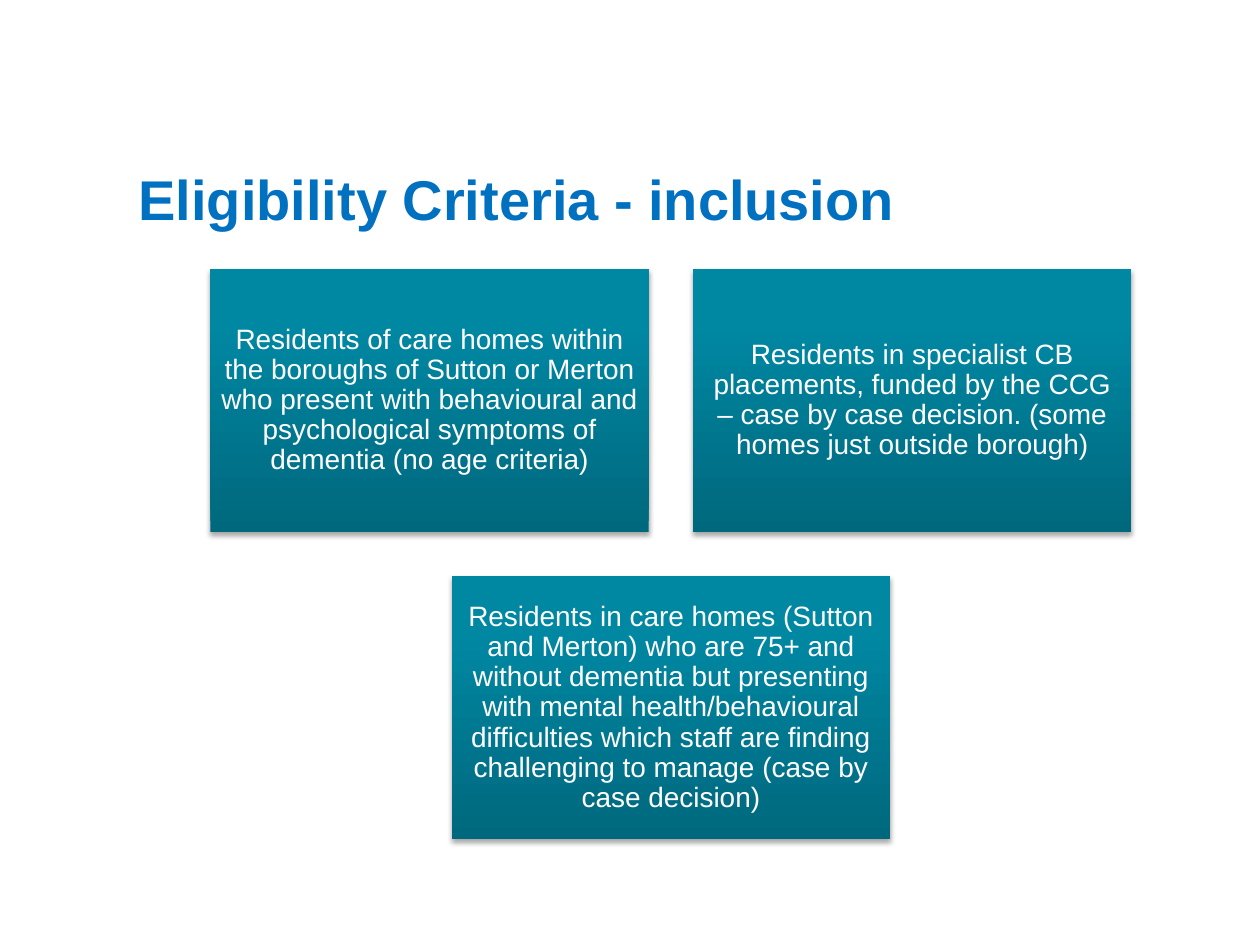
from copy import deepcopy

from lxml import etree
from pptx import Presentation
from pptx.dml.color import RGBColor
from pptx.enum.shapes import MSO_SHAPE as Preset
from pptx.enum.text import MSO_ANCHOR as Anchor, MSO_AUTO_SIZE as AutoSize, PP_ALIGN as Align
from pptx.oxml.ns import qn
from pptx.util import Cm, Pt

TITLE_BLUE = RGBColor(0x00, 0x70, 0xC0)
WHITE = RGBColor(0xFF, 0xFF, 0xFF)
TEAL_STOPS = [
    (0, RGBColor(0x00, 0x68, 0x7D)),
    (0.8, RGBColor(0x00, 0x88, 0xA3)),
    (1, RGBColor(0x00, 0x88, 0xA4)),
]
FONT = "Arial"
COLUMNS = 2
GAP = Cm(0.89)
INSET = Cm(0.18)
CRITERIA = [
    "Residents of care homes within the boroughs of Sutton or Merton who present "
    "with behavioural and psychological symptoms of dementia (no age criteria)",
    "Residents in specialist CB placements, funded by the CCG – case by case "
    "decision. (some homes just outside borough)",
    "Residents in care homes (Sutton and Merton) who are 75+ and without dementia "
    "but presenting with mental health/behavioural difficulties which staff are "
    "finding challenging to manage (case by case decision)",
]


def format_text(frame, align, size, color, bold=False):
    frame.word_wrap = True
    frame.auto_size = AutoSize.NONE
    frame.vertical_anchor = Anchor.MIDDLE
    para = frame.paragraphs[0]
    para.alignment = align
    font = para.runs[0].font
    font.name, font.size, font.bold = FONT, Pt(size), bold
    font.color.rgb = color
    return para


def place_title(page, text, left, top, width, height):
    title = page.shapes.title
    title.left, title.top, title.width, title.height = left, top, width, height
    title.text_frame.text = text
    format_text(title.text_frame, Align.LEFT, 32, TITLE_BLUE, bold=True)


def fill_teal(box):
    box.fill.gradient()
    box.fill.gradient_angle = 90
    # A new gradient has two stops; the third is a copy of the first
    stop_list = box.fill.gradient_stops[0]._gs.getparent()
    stop_list.append(deepcopy(stop_list[0]))
    for stop, (position, color) in zip(box.fill.gradient_stops, TEAL_STOPS):
        stop.position = position
        stop.color.rgb = color


def add_soft_shadow(box):
    box.shadow.inherit = False
    effects = box._element.spPr.find(qn("a:effectLst"))
    shadow = etree.SubElement(effects, qn("a:outerShdw"), blurRad=str(Pt(3.1)),
                              dist=str(Pt(1.8)), dir="5400000", rotWithShape="0")
    color = etree.SubElement(shadow, qn("a:srgbClr"), val="000000")
    etree.SubElement(color, qn("a:alpha"), val="35000")


def add_criterion(page, text, left, top, width, height):
    box = page.shapes.add_shape(Preset.RECTANGLE, left, top, width, height)
    fill_teal(box)
    box.line.fill.background()
    add_soft_shadow(box)
    frame = box.text_frame
    frame.margin_left = frame.margin_right = INSET
    frame.margin_top = frame.margin_bottom = INSET
    frame.text = text
    para = format_text(frame, Align.CENTER, 16, WHITE)
    para.line_spacing = 0.9
    para.space_after = Pt(5.6)


def add_criteria_grid(page, criteria, left, top, width, height):
    rows = [criteria[i:i + COLUMNS] for i in range(0, len(criteria), COLUMNS)]
    box_width = (width - GAP * (COLUMNS - 1)) // COLUMNS
    box_height = (height - GAP * (len(rows) - 1)) // len(rows)
    for row_number, row in enumerate(rows):
        # Each row is centred in the grid
        row_width = len(row) * (box_width + GAP) - GAP
        row_left = left + (width - row_width) // 2
        for column, text in enumerate(row):
            add_criterion(page, text, row_left + column * (box_width + GAP),
                          top + row_number * (box_height + GAP), box_width, box_height)


def main():
    deck = Presentation()
    deck.slide_width, deck.slide_height = Cm(25.4), Cm(19.05)
    page = deck.slides.add_slide(deck.slide_layouts[5])
    place_title(page, "Eligibility Criteria - inclusion",
                Cm(2.54), Cm(2.92), Cm(21.97), Cm(2.13))
    add_criteria_grid(page, CRITERIA, Cm(4.24), Cm(5.42), Cm(18.57), Cm(11.5))
    deck.save("out.pptx")


if __name__ == "__main__":
    main()
